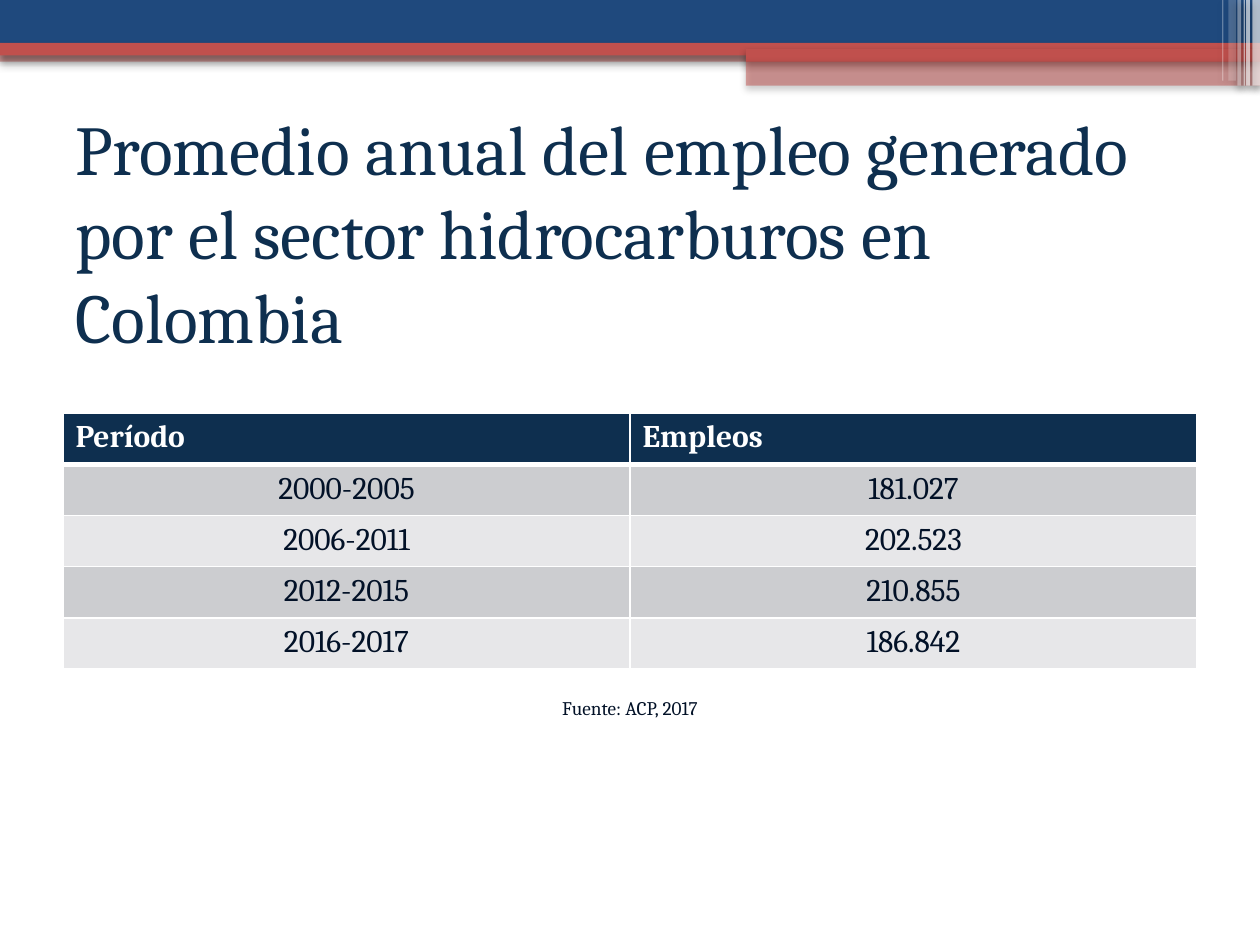
from lxml.etree import SubElement
from pptx import Presentation
from pptx.dml.color import RGBColor
from pptx.enum.shapes import MSO_SHAPE
from pptx.enum.text import MSO_ANCHOR, PP_ALIGN
from pptx.oxml import parse_xml
from pptx.oxml.ns import nsdecls, qn
from pptx.util import Inches, Pt

FONT = "Cambria"
HUES = {
    "blue": "1F497D", "red": "C0504D", "white": "FFFFFF", "navy": "0E2F4F",
    "ink": "021127", "dark": "CCCDD0", "light": "E7E7E9", "black": "000000",
}


def rgb(hue):
    return RGBColor.from_string(HUES[hue])


def write(frame, text, size=18, hue="ink", bold=False, align=PP_ALIGN.LEFT):
    para = frame.paragraphs[0]
    para.alignment = align
    run = para.add_run()
    run.text = text
    font = run.font
    font.name, font.size, font.bold = FONT, Pt(size), bold
    font.color.rgb = rgb(hue)


def fade(node, share):
    SubElement(node, qn("a:alpha"), val=str(share * 1000))


def edge(cell, side, width):
    line = parse_xml(
        f'<a:{side} {nsdecls("a")} w="{Pt(width)}"><a:solidFill>'
        f'<a:srgbClr val="{HUES["white"]}"/></a:solidFill></a:{side}>')
    cell._tc.get_or_add_tcPr().append(line)


class Deck:
    """Slide on a grid of 100 columns by 75 rows."""

    def __init__(self):
        self.show = Presentation()
        self.show.slide_width, self.show.slide_height = Inches(10), Inches(7.5)
        self.unit = self.show.slide_width / 100
        self.slide = self.show.slides.add_slide(self.show.slide_layouts[6])

    def grid(self, *cells):
        return [round(n * self.unit) for n in cells]

    def bar(self, col, row, wide, high, hue, solid=100):
        bar = self.slide.shapes.add_shape(
            MSO_SHAPE.RECTANGLE, *self.grid(col, row, wide, high))
        bar.fill.solid()
        bar.fill.fore_color.rgb = rgb(hue)
        bar.line.fill.background()
        bar.shadow.inherit = False
        props = bar._element.spPr
        if solid < 100:
            fade(props.find(qn("a:solidFill"))[0], solid)
        shade = SubElement(
            props.find(qn("a:effectLst")), qn("a:outerShdw"), dir="5400000",
            blurRad=str(Pt(4.1)), dist=str(Pt(2)), rotWithShape="0")
        fade(SubElement(shade, qn("a:srgbClr"), val=HUES["black"]), 40)

    def text(self, col, row, wide, high, words, anchor=MSO_ANCHOR.TOP, **style):
        box = self.slide.shapes.add_textbox(*self.grid(col, row, wide, high))
        frame = box.text_frame
        frame.word_wrap = True
        frame.vertical_anchor = anchor
        write(frame, words, **style)

    def table(self, col, row, wide, high, rows):
        table = self.slide.shapes.add_table(
            len(rows), len(rows[0]), *self.grid(col, row, wide, high)).table
        for r, line in enumerate(rows):
            for c, words in enumerate(line):
                cell = table.cell(r, c)
                head = r == 0
                # Borders come before the fill
                for side in ("lnL", "lnR", "lnT", "lnB"):
                    thick = (r, side) in ((0, "lnB"), (1, "lnT"))
                    edge(cell, side, 3 if thick else 0.96)
                cell.fill.solid()
                cell.fill.fore_color.rgb = rgb(
                    "navy" if head else "dark" if r % 2 else "light")
                write(cell.text_frame, words, bold=head,
                      hue="white" if head else "ink",
                      align=PP_ALIGN.LEFT if head else PP_ALIGN.CENTER)


def main():
    deck = Deck()

    # Top band
    deck.bar(0, 4, 100, 0.9, "red", 50)
    deck.bar(0, 0, 100, 3.4, "blue")
    deck.bar(0, 3.4, 100, 1, "red")
    deck.bar(59.2, 3.9, 40.8, 1, "red")
    deck.bar(59.2, 4.8, 40.8, 2, "red", 50)

    # Pale stripes at the right: column, width, height, opacity
    for col, wide, high, solid in (
            (99.4, 0.6, 6.8, 66), (98.9, 0.3, 6.8, 66), (98.7, 0.1, 6.8, 60),
            (98.2, 0.3, 6.8, 40), (97.5, 0.6, 6.4, 20), (97, 0.1, 6.4, 31)):
        deck.bar(col, 0, wide, high, "white", solid)

    # Title
    deck.text(5, 12.5, 90, 11.7,
              "Promedio anual del empleo generado por el sector "
              "hidrocarburos en Colombia",
              anchor=MSO_ANCHOR.MIDDLE, size=40, hue="navy")

    # Jobs by period
    deck.table(5, 32.8, 90, 20.3, (
        ("Período", "Empleos"),
        ("2000-2005", "181.027"),
        ("2006-2011", "202.523"),
        ("2012-2015", "210.855"),
        ("2016-2017", "186.842")))

    # Source line
    deck.text(37.4, 54.8, 25.2, 2.8, "Fuente: ACP, 2017",
              size=11, align=PP_ALIGN.CENTER)

    deck.show.save("out.pptx")


if __name__ == "__main__":
    main()
